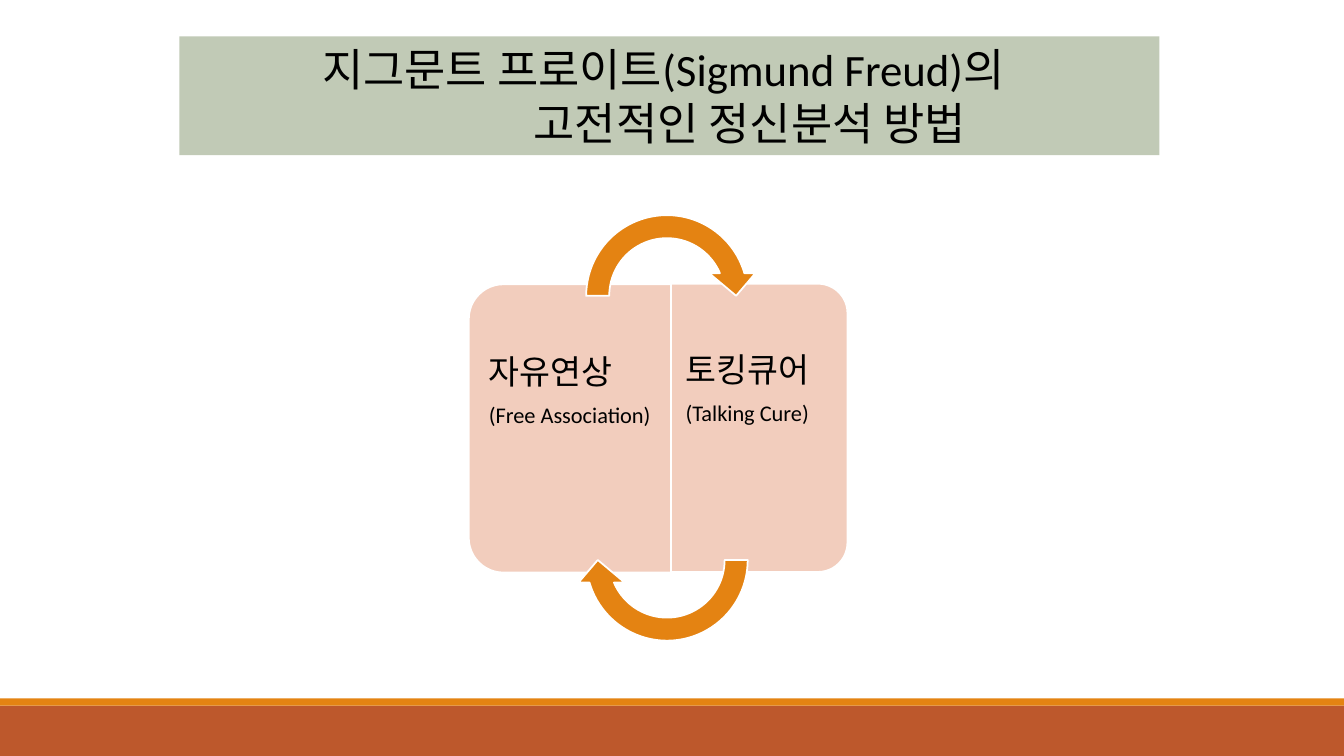
from pptx import Presentation
from pptx.dml.color import RGBColor
from pptx.enum.shapes import MSO_SHAPE
from pptx.enum.text import MSO_ANCHOR, PP_ALIGN
from pptx.util import Inches, Pt

RECT = MSO_SHAPE.RECTANGLE
PANEL = MSO_SHAPE.ROUND_2_SAME_RECTANGLE
ARROW = MSO_SHAPE.CIRCULAR_ARROW
TOP = MSO_ANCHOR.TOP
MIDDLE = MSO_ANCHOR.MIDDLE
CENTER = PP_ALIGN.CENTER
LEFT = PP_ALIGN.LEFT

BLACK = RGBColor(0x00, 0x00, 0x00)
WHITE = RGBColor(0xFF, 0xFF, 0xFF)
RUST = RGBColor(0xBD, 0x58, 0x2C)
ORANGE = RGBColor(0xE4, 0x83, 0x12)
SAGE = RGBColor(0xC1, 0xCA, 0xB6)
PEACH = RGBColor(0xF2, 0xCD, 0xBD)
FONT = "Calibri"

# Title lines: text, left margin and right margin in inches
TITLE = [
    ("지그문트 프로이트(Sigmund Freud)의", 0, 0.12),
    ("고전적인 정신분석 방법", 1.6, 0),
]
TITLE_BOX = (1.78, 0.36, 9.72, 1.18)
BANDS = [((0, 7, 13.33, 0.5), RUST), ((0, 6.93, 13.33, 0.07), ORANGE)]

# Methods: name, gloss, panel box, turn, text box, left and right insets
METHODS = [
    ("자유연상", "(Free Association)", (4.25, 3.22, 2.86, 2.06), 270,
     (4.75, 2.92, 1.96, 2.66), (0.1, 0.15)),
    ("토킹큐어", "(Talking Cure)", (6.1, 3.37, 2.86, 1.75), 90,
     (6.65, 2.9, 1.66, 2.69), (0.15, 0.1)),
]
ARROWS = [(2.02, 0), (4.64, 180)]
ARROW_LEFT, ARROW_SIZE = 5.7, 1.83
ARROW_ADJ = (0.125, 11.423, 204.577, 108, 0.125)
TEXT_TOP = 0.67

prs = Presentation()
prs.slide_width, prs.slide_height = Inches(13.33), Inches(7.5)
slide = prs.slides.add_slide(prs.slide_layouts[6])


def add_shape(kind, box, fill, turn=0, adj=(), edge=False):
    shape = slide.shapes.add_shape(kind, *map(Inches, box))
    shape.shadow.inherit = False
    shape.rotation = turn
    shape.fill.solid()
    shape.fill.fore_color.rgb = fill
    if edge:
        shape.line.color.rgb = WHITE
        shape.line.width = Pt(1.25)
    else:
        shape.line.fill.background()
    for i, value in enumerate(adj):
        shape.adjustments[i] = value
    return shape


def add_line(frame, index, text, size, align):
    para = frame.add_paragraph() if index else frame.paragraphs[0]
    para.alignment = align
    run = para.add_run()
    run.text = text
    run.font.name = FONT
    run.font.size = Pt(size)
    run.font.color.rgb = BLACK
    return para


for box, color in BANDS:
    add_shape(RECT, box, color)

frame = add_shape(RECT, TITLE_BOX, SAGE).text_frame
frame.word_wrap = True
frame.vertical_anchor = MIDDLE
for i, (text, left, right) in enumerate(TITLE):
    props = add_line(frame, i, text, 32, CENTER)._p.get_or_add_pPr()
    props.set("marL", str(Inches(left)))
    props.set("marR", str(Inches(right)))

for name, gloss, panel, turn, box, (left, right) in METHODS:
    add_shape(PANEL, panel, PEACH, turn, (0.167, 0), True)
    frame = slide.shapes.add_textbox(*map(Inches, box)).text_frame
    frame.word_wrap = True
    frame.vertical_anchor = TOP
    frame.margin_left, frame.margin_right = Inches(left), Inches(right)
    frame.margin_top, frame.margin_bottom = Inches(TEXT_TOP), Inches(0.17)
    for i, (text, size) in enumerate([(name, 24), (gloss, 16)]):
        para = add_line(frame, i, text, size, LEFT)
        para.line_spacing = 0.9
        para.space_after = Pt(size * 0.35)

for top, turn in ARROWS:
    box = (ARROW_LEFT, top, ARROW_SIZE, ARROW_SIZE)
    add_shape(ARROW, box, ORANGE, turn, ARROW_ADJ, True)

prs.save("out.pptx")
